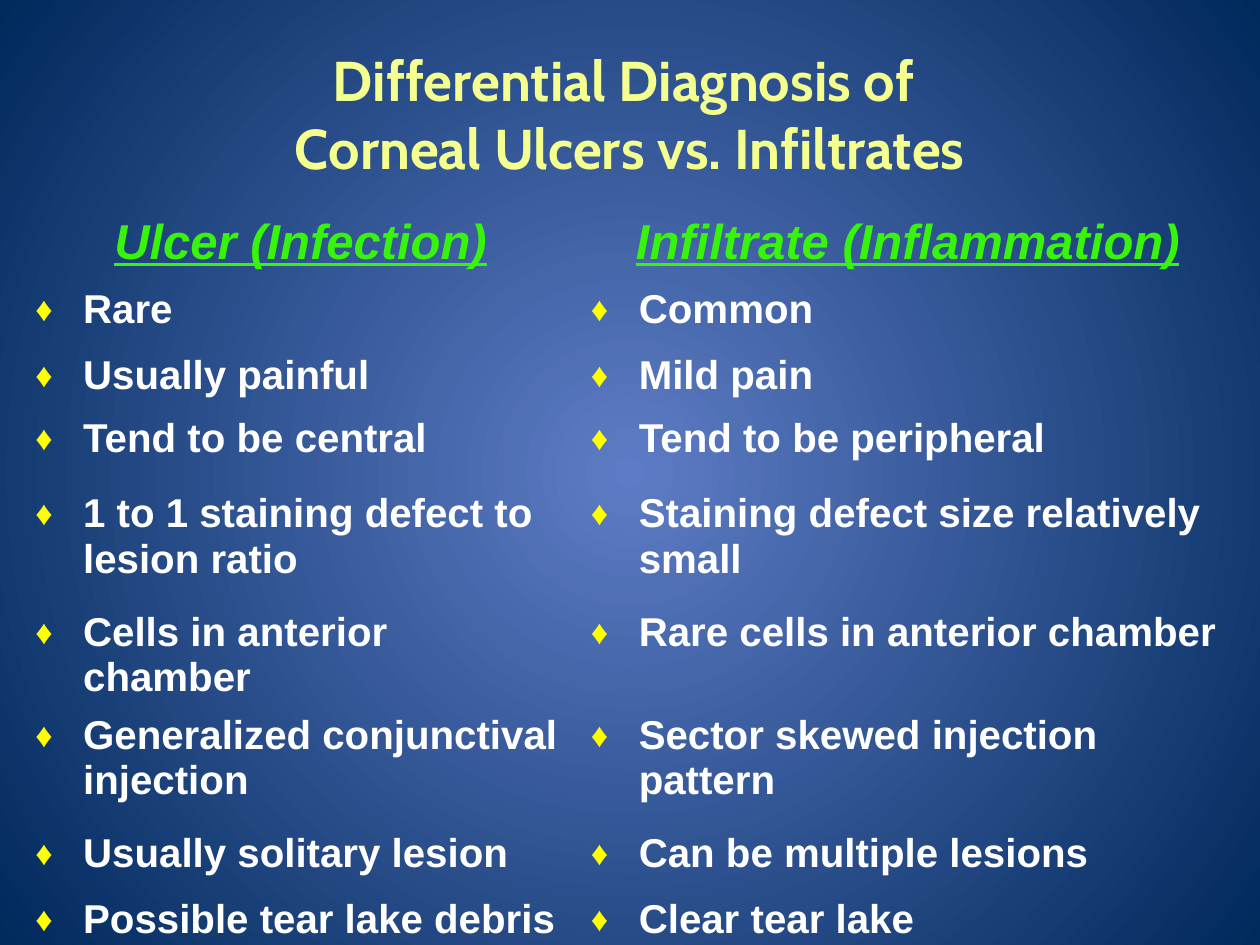
"""Build a slide comparing corneal ulcers with infiltrates in a two-column table."""
from dataclasses import dataclass

import lxml.etree
import pptx
import pptx.dml.color
import pptx.enum.text
import pptx.oxml.ns
import pptx.util

Inches = pptx.util.Inches
qn = pptx.oxml.ns.qn


@dataclass(frozen=True)
class Theme:
    glow: str = "5E7CC5"
    edge: str = "00295C"
    title: str = "F4FF8F"
    heading: str = "38F40C"
    body: str = "FFFFFF"
    bullet: str = "FFFF00"
    title_font: str = "Cabin"
    body_font: str = "Arial"
    title_size: int = 32
    heading_size: int = 28
    body_size: int = 23


theme = Theme()
title = "Differential Diagnosis of \nCorneal Ulcers vs. Infiltrates"
headings = ("Ulcer (Infection)", "Infiltrate (Inflammation)")
findings = [
    ("Rare", "Common"),
    ("Usually painful", "Mild pain"),
    ("Tend to be central", "Tend to be peripheral"),
    ("1 to 1 staining defect to lesion ratio", "Staining defect size relatively small"),
    ("Cells in anterior chamber", "Rare cells in anterior chamber"),
    ("Generalized conjunctival injection", "Sector skewed injection pattern"),
    ("Usually solitary lesion", "Can be multiple lesions"),
    ("Possible tear lake debris", "Clear tear lake"),
]
column_widths = (4.41, 5.23)
row_heights = (1.41, 0.61, 0.52, 0.5, 0.6, 0.94, 0.52, 0.94, 0.52, 0.52)


def write_cell(cell, text, font, size, color):
    para = cell.text_frame.paragraphs[0]
    para.text = text
    for span in para.runs:
        span.font.name = font
        span.font.size = pptx.util.Pt(size)
        span.font.bold = True
        span.font.color.rgb = pptx.dml.color.RGBColor.from_string(color)
    return para


def add_bullet(para):
    properties = para._p.get_or_add_pPr()
    properties.set("marL", str(Inches(0.38)))
    properties.set("indent", str(Inches(-0.38)))
    color = lxml.etree.SubElement(properties, qn("a:buClr"))
    lxml.etree.SubElement(color, qn("a:srgbClr"), val=theme.bullet)
    lxml.etree.SubElement(properties, qn("a:buSzPct"), val="85000")
    lxml.etree.SubElement(properties, qn("a:buFont"), typeface=theme.body_font)
    lxml.etree.SubElement(properties, qn("a:buChar"), char="♦")


deck = pptx.Presentation()
deck.slide_width, deck.slide_height = Inches(10), Inches(7.5)
page = deck.slides.add_slide(deck.slide_layouts[6])

backdrop = page.background.fill
backdrop.gradient()
for stop, position, color in zip(backdrop.gradient_stops, (0, 1), (theme.glow, theme.edge)):
    stop.position = position
    stop.color.rgb = pptx.dml.color.RGBColor.from_string(color)
gradient = page.element.find(".//" + qn("a:gradFill"))
gradient.remove(gradient.find(qn("a:lin")))
circle = lxml.etree.SubElement(gradient, qn("a:path"), path="circle")
lxml.etree.SubElement(circle, qn("a:fillToRect"), {side: "50000" for side in "ltrb"})

frame = page.shapes.add_table(
    len(row_heights), len(column_widths), Inches(0.18), Inches(0.21),
    Inches(sum(column_widths)), Inches(sum(row_heights)))
table = frame.table
table.first_row = table.horz_banding = False
style = table._tbl.tblPr.find(qn("a:tableStyleId"))
style.text = "{2D5ABB26-0587-4C30-8999-92F81FD0307C}"
for column, width in zip(table.columns, column_widths):
    column.width = Inches(width)
for row, height in zip(table.rows, row_heights):
    row.height = Inches(height)
for cell in table.iter_cells():
    cell.fill.background()

title_cell = table.cell(0, 0)
title_cell.merge(table.cell(0, 1))
title_cell.vertical_anchor = pptx.enum.text.MSO_ANCHOR.MIDDLE
para = write_cell(title_cell, title, theme.title_font, theme.title_size, theme.title)
para.alignment = pptx.enum.text.PP_ALIGN.CENTER

for index, heading in enumerate(headings):
    cell = table.cell(1, index)
    cell.vertical_anchor = pptx.enum.text.MSO_ANCHOR.MIDDLE
    para = write_cell(cell, heading, theme.body_font, theme.heading_size, theme.heading)
    para.alignment = pptx.enum.text.PP_ALIGN.CENTER
    para.runs[0].font.italic = para.runs[0].font.underline = True

for row_index, finding in enumerate(findings, start=2):
    for index, text in enumerate(finding):
        cell = table.cell(row_index, index)
        add_bullet(write_cell(cell, text, theme.body_font, theme.body_size, theme.body))

deck.save("out.pptx")
